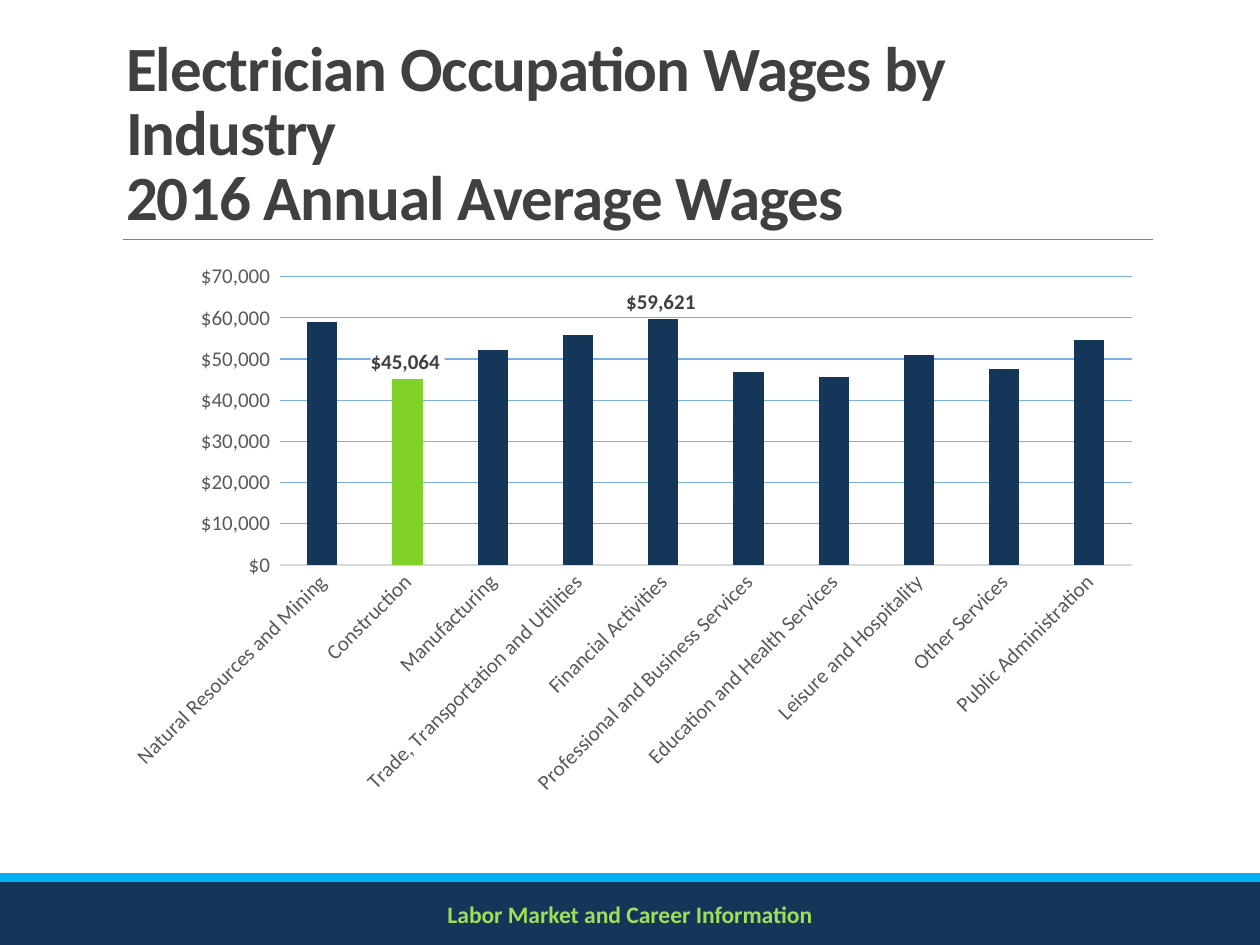
from lxml import etree
from pptx import Presentation
from pptx import util as u
from pptx.chart.data import CategoryChartData
from pptx.dml.color import RGBColor
from pptx.enum import chart as ch, shapes, text
from pptx.oxml import parse_xml
from pptx.oxml.ns import nsdecls, qn

WIDTH, HEIGHT = 10, 7.5
LEFT, SPAN = 0.9, 8.25
NAVY, SKY, GREEN, LIME = "133659", "00B0F0", "81D228", "9FDF58"
DARK, GRAY = "404040", "595959"
DOLLARS = '"$"#,##0_);[Red]\\("$"#,##0\\)'
WAGES = {
    "Natural Resources and Mining": 58901,
    "Construction": 45064,
    "Manufacturing": 52159,
    "Trade, Transportation and Utilities": 55722,
    "Financial Activities": 59621,
    "Professional and Business Services": 46853,
    "Education and Health Services": 45547,
    "Leisure and Hospitality": 50911,
    "Other Services": 47644,
    "Public Administration": 54686,
}
HIGHLIGHT = "Construction"
LABELLED = (HIGHLIGHT, "Financial Activities")
PLOT_SHARES = {"x": 0.16, "y": 0.04, "w": 0.82, "h": 0.52}


def color(value):
    """Turn a hex string into a colour."""
    return RGBColor.from_string(value)


def box(left, top, width, height):
    """Convert a rectangle in inches to slide lengths."""
    return [u.Inches(n) for n in (left, top, width, height)]


def style(target, formats):
    """Set each attribute of the target from a dict."""
    for name, value in formats.items():
        setattr(target, name, value)


def style_font(font, size, tint, bold=False):
    """Give a font its face, size, weight and colour."""
    style(font, {"name": "Calibri", "size": u.Pt(size), "bold": bold})
    font.color.rgb = color(tint)


def style_line(line, tint, width):
    """Give a line its colour and width in points."""
    line.color.rgb = color(tint)
    line.width = u.Pt(width)


def add_band(slide, top, height, tint):
    """Draw a band across the whole slide."""
    band = slide.shapes.add_shape(shapes.MSO_SHAPE.RECTANGLE, *box(0, top, WIDTH, height))
    band.shadow.inherit = False
    band.fill.solid()
    band.fill.fore_color.rgb = color(tint)
    band.line.fill.background()


def add_rule(slide, start, end, y):
    """Draw the thin rule below the title."""
    rule = slide.shapes.add_connector(
        shapes.MSO_CONNECTOR.STRAIGHT, *box(start, y, end, y))
    style_line(rule.line, "808080", 0.5)
    etree.SubElement(rule._element.spPr, qn("a:effectLst"))


def add_footer(slide, wording):
    """Write the centred footer over the navy band."""
    frame = slide.shapes.add_textbox(*box(0, 7.08, WIDTH, 0.35)).text_frame
    style(frame, {"word_wrap": True, "vertical_anchor": text.MSO_ANCHOR.MIDDLE})
    paragraph = frame.paragraphs[0]
    style(paragraph, {"text": wording, "alignment": text.PP_ALIGN.CENTER})
    style_font(paragraph.runs[0].font, 13.5, LIME, True)


def fill_title(slide, wording):
    """Place and format the title placeholder."""
    title = slide.shapes.title
    style(title, dict(zip(("left", "top", "width", "height"), box(LEFT, 0.31, SPAN, 1.59))))
    style(title.text_frame, {"word_wrap": True, "auto_size": text.MSO_AUTO_SIZE.NONE,
                             "vertical_anchor": text.MSO_ANCHOR.BOTTOM})
    paragraph = title.text_frame.paragraphs[0]
    style(paragraph, {"text": wording, "alignment": text.PP_ALIGN.LEFT, "line_spacing": 0.85})
    for run in paragraph.runs:
        style_font(run.font, 36, DARK, True)
        run._r.get_or_add_rPr().set("spc", "-50")


def place_plot(chart):
    """Fix the inner plot area to shares of the chart."""
    area = chart._chartSpace.chart.plotArea
    for old in area.findall(qn("c:layout")):
        area.remove(old)
    parts = {"layoutTarget": "inner", "xMode": "edge", "yMode": "edge", **PLOT_SHARES}
    inside = "".join(f'<c:{name} val="{value}"/>' for name, value in parts.items())
    area.insert(0, parse_xml(
        f'<c:layout {nsdecls("c")}><c:manualLayout>{inside}</c:manualLayout></c:layout>'))


def format_axes(chart):
    """Format the industry and wage axes."""
    for axis in (chart.category_axis, chart.value_axis):
        style(axis, {"major_tick_mark": ch.XL_TICK_MARK.NONE,
                     "minor_tick_mark": ch.XL_TICK_MARK.NONE})
        style_font(axis.tick_labels.font, 12, GRAY)
    industries, wages = chart.category_axis, chart.value_axis
    style_line(industries.format.line, "D9D9D9", 0.75)
    industries._element.find(qn("c:txPr")).find(qn("a:bodyPr")).set("rot", "-2700000")
    style(wages, {"minimum_scale": 0, "maximum_scale": 70000, "major_unit": 10000,
                  "has_major_gridlines": True})
    wages.format.line.fill.background()
    style_line(wages.major_gridlines.format.line, "7AAFE3", 0.75)
    style(wages.tick_labels, {"number_format": DOLLARS, "number_format_is_linked": False})


def format_columns(plot):
    """Colour the columns and label the chosen ones."""
    style(plot, {"gap_width": 182, "vary_by_categories": False})
    series = plot.series[0]
    series.format.fill.solid()
    series.format.fill.fore_color.rgb = color(NAVY)
    series.data_labels.show_value = False
    industries = list(WAGES)
    highlight = series.points[industries.index(HIGHLIGHT)].format.fill
    highlight.solid()
    highlight.fore_color.rgb = color(GREEN)
    for industry in LABELLED:
        label = series.points[industries.index(industry)].data_label
        style_font(label.font, 12, DARK, True)
        label.position = ch.XL_LABEL_POSITION.OUTSIDE_END
    for label in series._element.iter(qn("c:dLbl")):
        for old in label.findall(qn("c:spPr")):
            label.remove(old)
        label.find(qn("c:txPr")).addprevious(parse_xml(
            f'<c:spPr {nsdecls("c", "a")}><a:solidFill><a:srgbClr val="FFFFFF"/>'
            '</a:solidFill></c:spPr>'))


def add_wage_chart(slide):
    """Add the column chart of wages by industry."""
    wage_data = CategoryChartData(number_format=DOLLARS)
    wage_data.categories = list(WAGES)
    wage_data.add_series("Series 1", list(WAGES.values()))
    chart = slide.shapes.add_chart(
        ch.XL_CHART_TYPE.COLUMN_CLUSTERED, *box(LEFT, 2.02, SPAN, 4.4), wage_data).chart
    style(chart, {"has_legend": False, "has_title": False})
    style_font(chart.font, 10, "000000")
    format_axes(chart)
    format_columns(chart.plots[0])
    place_plot(chart)


def main():
    """Build the slide and save it."""
    deck = Presentation()
    style(deck, {"slide_width": u.Inches(WIDTH), "slide_height": u.Inches(HEIGHT)})
    slide = deck.slides.add_slide(deck.slide_layouts[5])
    add_band(slide, 7, 0.5, NAVY)
    add_band(slide, 6.93, 0.07, SKY)
    add_rule(slide, 0.98, LEFT + SPAN, 1.9)
    add_footer(slide, "Labor Market and Career Information")
    fill_title(slide, "Electrician Occupation Wages by Industry \v2016 Annual Average Wages")
    add_wage_chart(slide)
    deck.save("out.pptx")


if __name__ == "__main__":
    main()
